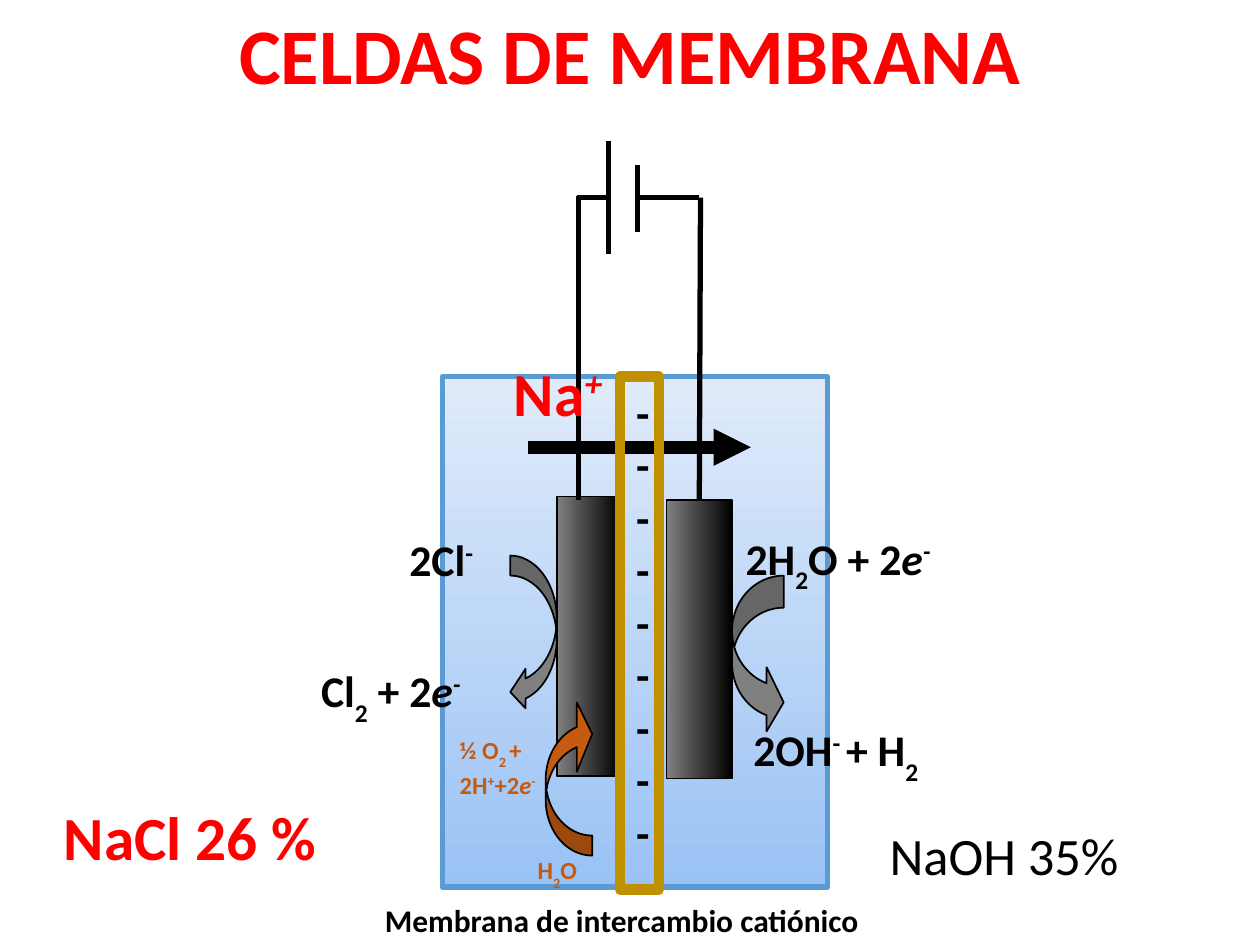
from pptx import Presentation
from pptx.dml.color import RGBColor
from pptx.enum.shapes import MSO_CONNECTOR, MSO_SHAPE
from pptx.enum.text import PP_ALIGN
from pptx.oxml.ns import qn
from pptx.util import Pt
from lxml.etree import SubElement

THEME = {
    "font": "Calibri",
    "black": "000000", "red": "FF0000", "rust": "C55A11", "gray": "808080",
    "gold": "BF9000", "blue": "5B9BD5", "water": ("E0EBFA", "9AC2F5"),
    "heading": 45, "large": 35, "product": 30, "formula": 25, "caption": 18, "small": 14,
}

# Boxes are left, top, width, height in points
TANK = (252.7, 215.3, 220.3, 291.6)
MEMBRANE = (354.2, 215.3, 22.3, 293)
ELECTRODES = [(380.9, 285.8, 37.4, 159.1), (318.2, 283.7, 36, 159.8)]

# Wires and battery plates: x1, y1, x2, y2
CIRCUIT = [
    (330.5, 285.8, 330.5, 112.3),
    (399.6, 285.8, 400.3, 113),
    (329.8, 113, 347.8, 113),
    (364.3, 113, 399.6, 113),
    (347.8, 145.4, 347.8, 80.6),
    (364.3, 132.5, 364.3, 94.3),
]
ION_FLOW = (301.7, 255.6, 429.1, 255.6)

# Shape, box, adjustments, colour, rotation
REACTION_ARROWS = [
    (MSO_SHAPE.CURVED_RIGHT_ARROW, (418.3, 329, 29.5, 90.7), (0.62, 1.24, 0.33), "gray", 0),
    (MSO_SHAPE.CURVED_LEFT_ARROW, (291.6, 317.5, 26.6, 89.3), (0.43, 0.85, 0.33), "gray", 0),
    (MSO_SHAPE.CURVED_LEFT_ARROW, (311.8, 399.6, 26.6, 89.3), (0.43, 1.49, 0.33), "rust", 180),
]

CHARGES = ((356.4, 216.7, 18, 288.7), [("----------", "")], "formula", "black", "bold wrap")

# Box, runs (text, style), size, colour, layout
LABELS = [
    ((39.6, 0, 640.8, 61.9), [("CELDAS DE MEMBRANA", "")], "heading", "red", "bold wrap center"),
    ((419, 300.2, 141.1, 35.3),
     [("2H", ""), ("2", "sub"), ("O + 2", ""), ("e", "italic"), ("-", "italic sup")],
     "formula", "black", "bold wrap"),
    ((423.4, 409.7, 120.2, 35.3),
     [("2OH", ""), ("- ", "sup"), ("+ H", ""), ("2", "sub")],
     "formula", "black", "bold wrap"),
    ((226.8, 301, 80.6, 37.4), [("2Cl", ""), ("-", "sup")], "formula", "black", "bold wrap"),
    ((176.4, 375.8, 161.3, 37.4),
     [("Cl", ""), ("2", "sub"), (" + 2", ""), ("e", "italic"), ("-", "italic sup")],
     "formula", "black", "bold wrap"),
    ((500.4, 466.6, 146.9, 43.9), [("NaOH 35%", "")], "product", "black", "center"),
    ((29.5, 452.9, 165.6, 49.7), [("NaCl 26 %", "")], "large", "red", "bold"),
    ((282.2, 199.4, 73.4, 46.8), [("Na", ""), ("+", "italic sup")], "large", "red", "bold center"),
    ((211.7, 511.2, 287.3, 28.8), [("Membrana de intercambio catiónico", "")],
     "caption", "black", "bold center"),
    ((300.2, 485.3, 80.6, 23.8), [("H", ""), ("2", "sub"), ("O", "")],
     "small", "rust", "bold wrap"),
    ((255.6, 416.2, 69.8, 41),
     [("½ O", ""), ("2 ", "sub"), ("+ 2H", ""), ("+", "sup"), ("+2", ""),
      ("e", "italic"), ("-", "italic sup")],
     "small", "rust", "bold wrap"),
]
BASELINES = {"sub": "-33000", "sup": "33000"}


def color(name):
    return RGBColor.from_string(THEME[name])


def add_block(page, kind, box, line, width, fill=None, gradient=None, angle=0):
    shape = page.shapes.add_shape(kind, *map(Pt, box))
    shape.shadow.inherit = False
    shape.line.color.rgb = color(line)
    shape.line.width = Pt(width)
    if gradient:
        shape.fill.gradient()
        shape.fill.gradient_angle = angle
        for stop, value in zip(shape.fill.gradient_stops, gradient):
            stop.color.rgb = RGBColor.from_string(value)
    elif fill:
        shape.fill.solid()
        shape.fill.fore_color.rgb = color(fill)
    else:
        shape.fill.background()
    return shape


def add_line(page, ends, width, arrow=False):
    line = page.shapes.add_connector(MSO_CONNECTOR.STRAIGHT, *map(Pt, ends))
    line.line.color.rgb = color("black")
    line.line.width = Pt(width)
    if arrow:
        SubElement(line.line._get_or_add_ln(), qn("a:tailEnd"), type="triangle")
    SubElement(line._element.spPr, qn("a:effectLst"))


def add_label(page, box, runs, size, ink, layout):
    frame = page.shapes.add_textbox(*map(Pt, box)).text_frame
    frame.word_wrap = "wrap" in layout
    para = frame.paragraphs[0]
    para.alignment = PP_ALIGN.CENTER if "center" in layout else PP_ALIGN.LEFT
    para.font.name = THEME["font"]
    para.font.size = Pt(THEME[size])
    para.font.bold = "bold" in layout
    para.font.color.rgb = color(ink)
    for text, style in runs:
        span = para.add_run()
        span.text = text
        if "italic" in style:
            span.font.italic = True
        for name, shift in BASELINES.items():
            if name in style:
                span.font._element.set("baseline", shift)


def main():
    deck = Presentation()
    deck.slide_width, deck.slide_height = Pt(720), Pt(540)
    page = deck.slides.add_slide(deck.slide_layouts[6])

    # Tank, electrodes and circuit
    add_block(page, MSO_SHAPE.RECTANGLE, TANK, "blue", 3, gradient=THEME["water"], angle=270)
    for box in ELECTRODES:
        add_block(page, MSO_SHAPE.RECTANGLE, box, "black", 1,
                  gradient=(THEME["gray"], THEME["black"]))
    for ends in CIRCUIT:
        add_line(page, ends, 3)

    # Reactions and sodium flow
    for kind, box, adjustments, fill, rotation in REACTION_ARROWS:
        arrow = add_block(page, kind, box, "black", 1, fill=fill)
        arrow.rotation = rotation
        for index, value in enumerate(adjustments):
            arrow.adjustments[index] = value
    add_line(page, ION_FLOW, 7.09, arrow=True)

    # Charged membrane
    add_label(page, *CHARGES)
    add_block(page, MSO_SHAPE.RECTANGLE, MEMBRANE, "gold", 6)

    # Title and labels
    for label in LABELS:
        add_label(page, *label)

    deck.save("out.pptx")


if __name__ == "__main__":
    main()
